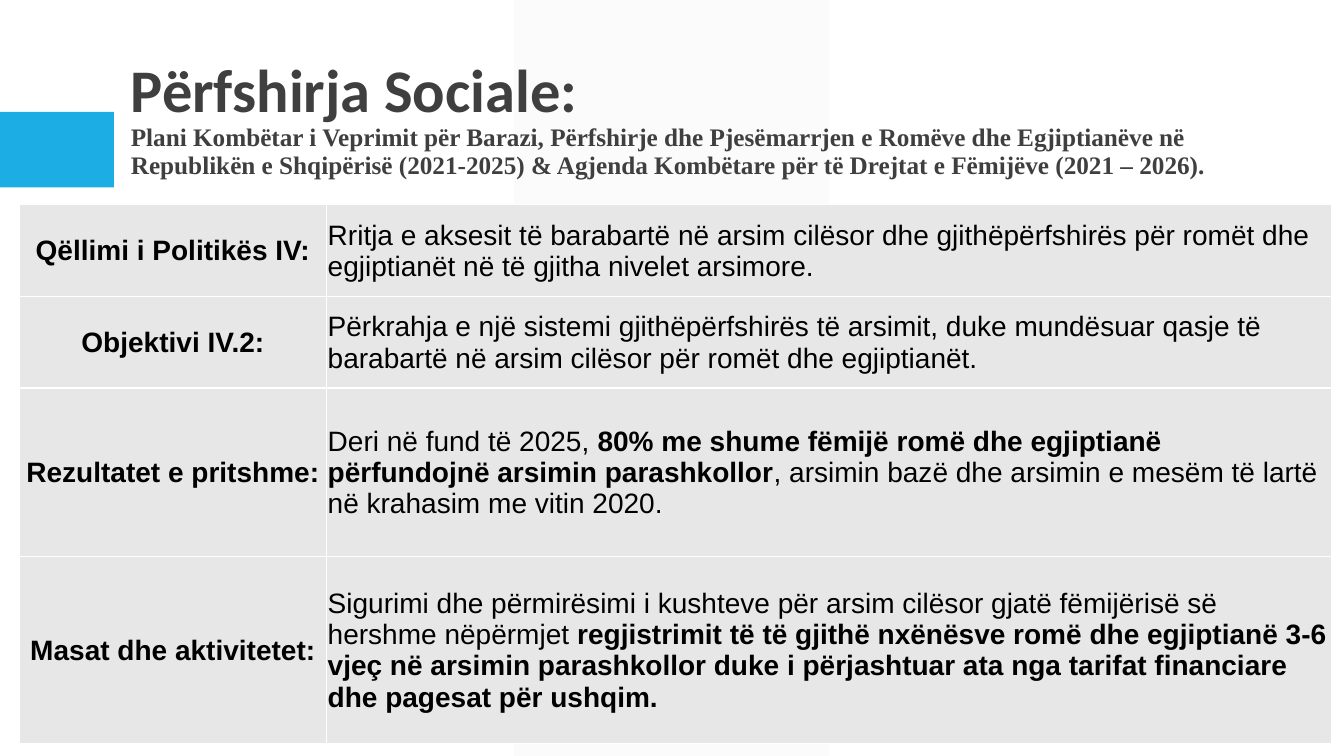
from dataclasses import dataclass

from lxml.etree import SubElement
from pptx import Presentation
from pptx.dml.color import RGBColor
from pptx.enum.shapes import MSO_SHAPE
from pptx.enum.text import MSO_ANCHOR, PP_ALIGN
from pptx.oxml import parse_xml
from pptx.oxml.ns import nsdecls, qn
from pptx.util import Inches, Pt


@dataclass(frozen=True)
class Theme:
    band: str = "F2F2F2"
    accent: str = "1CADE4"
    cell: str = "E7E7E7"
    border: str = "FFFFFF"
    ink: str = "000000"
    title: str = "3F3F3F"
    head_font: str = "Calibri"
    sub_font: str = "Times New Roman"
    body_font: str = "Arial"
    head_size: float = 43.2
    sub_size: float = 18
    body_size: float = 20


class Deck:
    def __init__(self, theme):
        self.theme = theme
        self.prs = Presentation()
        self.prs.slide_width = Inches(13.33)
        self.prs.slide_height = Inches(7.5)
        self.slide = self.prs.slides.add_slide(self.prs.slide_layouts[6])

    def style(self, run, font, size, color, bold=True):
        run.font.name = font
        run.font.size = Pt(size)
        run.font.bold = bold
        run.font.color.rgb = RGBColor.from_string(color)

    def block(self, kind, box, color, alpha=None):
        shape = self.slide.shapes.add_shape(kind, *map(Inches, box))
        shape.shadow.inherit = False
        shape.line.fill.background()
        shape.fill.solid()
        shape.fill.fore_color.rgb = RGBColor.from_string(color)
        if alpha is not None:
            tint = shape.fill._xPr.find(".//" + qn("a:srgbClr"))
            SubElement(tint, qn("a:alpha")).set("val", str(alpha * 1000))
        return shape

    def title(self, box, lines):
        frame = self.slide.shapes.add_textbox(*map(Inches, box)).text_frame
        frame.word_wrap = True
        frame.vertical_anchor = MSO_ANCHOR.BOTTOM
        frame.text = "\n".join(text for text, _, _ in lines)
        for par, (_, font, size) in zip(frame.paragraphs, lines):
            par.line_spacing = 0.9
            self.style(par.runs[0], font, size, self.theme.title)

    def edge(self, cell):
        props = cell._tc.get_or_add_tcPr()
        for i, side in enumerate("LRTB"):
            props.insert(i, parse_xml(
                f'<a:ln{side} w="{Pt(1)}" {nsdecls("a")}><a:solidFill>'
                f'<a:srgbClr val="{self.theme.border}"/>'
                f'</a:solidFill></a:ln{side}>'))

    def fill_cell(self, cell, parts, align):
        theme = self.theme
        cell.fill.solid()
        cell.fill.fore_color.rgb = RGBColor.from_string(theme.cell)
        cell.vertical_anchor = MSO_ANCHOR.MIDDLE
        cell.margin_left = cell.margin_right = cell.margin_top = Inches(0.01)
        cell.margin_bottom = 0
        par = cell.text_frame.paragraphs[0]
        par.alignment = align
        for text, bold in parts:
            run = par.add_run()
            run.text = text
            self.style(run, theme.body_font, theme.body_size, theme.ink, bold)
        self.edge(cell)

    def table(self, left, top, widths, heights, rows):
        box = (left, top, sum(widths), sum(heights))
        table = self.slide.shapes.add_table(
            len(rows), len(widths), *map(Inches, box)).table
        table.first_row = table.horz_banding = False
        for col, width in zip(table.columns, widths):
            col.width = Inches(width)
        for r, (label, parts) in enumerate(rows):
            table.rows[r].height = Inches(heights[r])
            self.fill_cell(table.cell(r, 0), [(label, True)], PP_ALIGN.CENTER)
            self.fill_cell(table.cell(r, 1), parts, PP_ALIGN.LEFT)


# Each row: label, then (text, bold) parts
ROWS = [
    ("Qëllimi i Politikës IV:", [
        ("Rritja e aksesit të barabartë në arsim cilësor dhe gjithëpërfshirës "
         "për romët dhe egjiptianët në të gjitha nivelet arsimore.", False)]),
    ("Objektivi IV.2:", [
        ("Përkrahja e një sistemi gjithëpërfshirës të arsimit, duke mundësuar "
         "qasje të barabartë në arsim cilësor për romët dhe egjiptianët.",
         False)]),
    ("Rezultatet e pritshme:", [
        ("Deri në fund të 2025, ", False),
        ("80% me shume fëmijë romë dhe egjiptianë përfundojnë arsimin "
         "parashkollor", True),
        (", arsimin bazë dhe arsimin e mesëm të lartë në krahasim me vitin "
         "2020.", False)]),
    ("Masat dhe aktivitetet:", [
        ("Sigurimi dhe përmirësimi i kushteve për arsim cilësor gjatë "
         "fëmijërisë së hershme nëpërmjet ", False),
        ("regjistrimit të të gjithë nxënësve romë dhe egjiptianë 3-6 vjeç në "
         "arsimin parashkollor duke i përjashtuar ata nga tarifat financiare "
         "dhe pagesat për ushqim.", True)]),
]


def main():
    theme = Theme()
    deck = Deck(theme)

    # Backdrop band and accent block
    band = deck.block(MSO_SHAPE.PARALLELOGRAM, (5.1, 0, 3.12, 7.5),
                      theme.band, alpha=29)
    band.adjustments[0] = 0
    deck.block(MSO_SHAPE.RECTANGLE, (0, 1.11, 1.13, 0.75), theme.accent)

    # Policy table
    deck.table(0.19, 2.03, (3.05, 9.97), (0.91, 0.91, 1.67, 1.86), ROWS)

    # Title with its subtitle
    deck.title((1.2, 1.04, 11.5, 0.79), [
        ("Përfshirja Sociale:", theme.head_font, theme.head_size),
        ("Plani Kombëtar i Veprimit për Barazi, Përfshirje dhe Pjesëmarrjen e "
         "Romëve dhe Egjiptianëve në Republikën e Shqipërisë (2021-2025) & "
         "Agjenda Kombëtare për të Drejtat e Fëmijëve (2021 – 2026).",
         theme.sub_font, theme.sub_size)])

    deck.prs.save("out.pptx")


if __name__ == "__main__":
    main()
